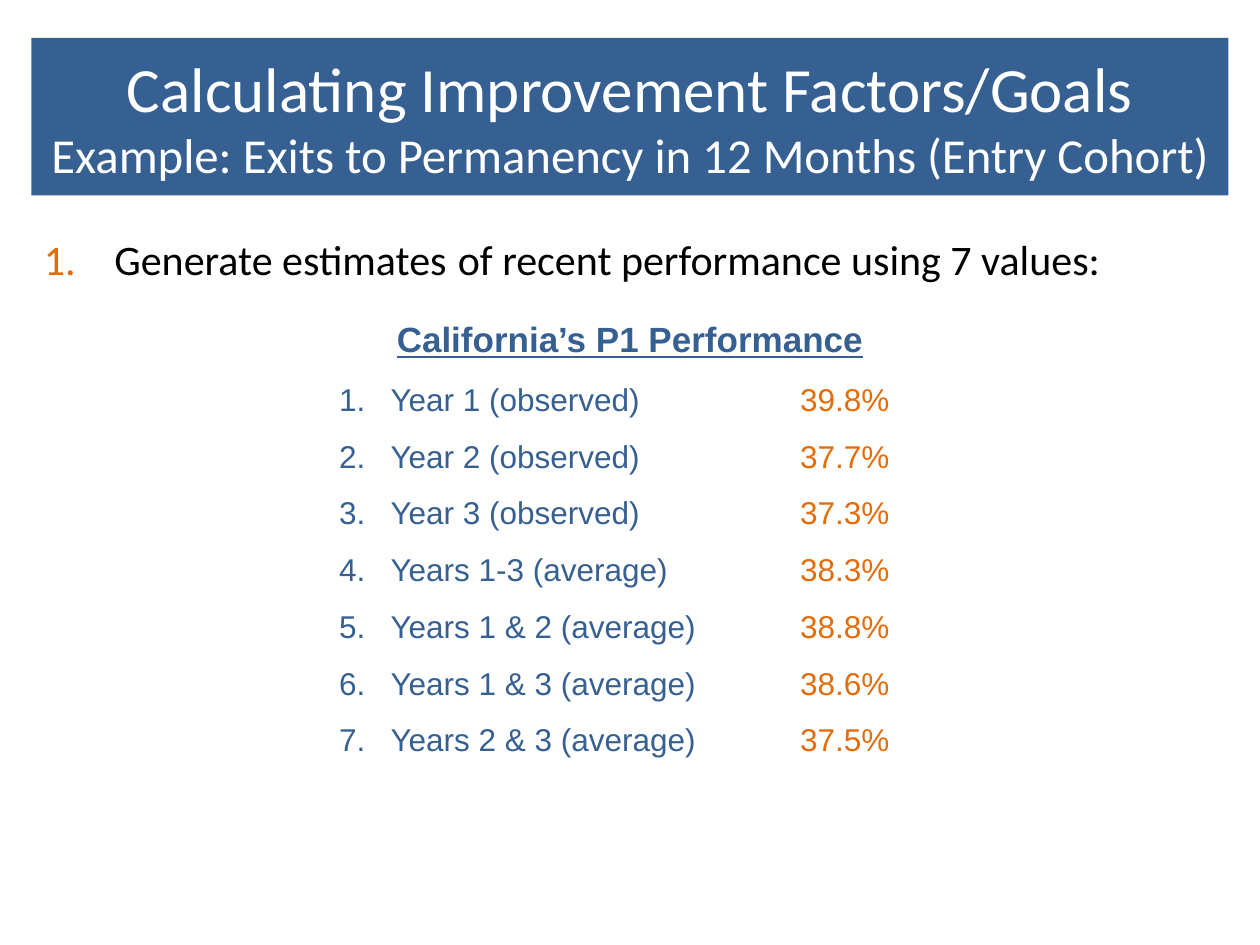
from pptx import Presentation
from pptx.dml.color import RGBColor
from pptx.enum.shapes import MSO_SHAPE
from pptx.enum.text import MSO_ANCHOR, PP_ALIGN
from pptx.oxml.ns import qn
from pptx.util import Emu, Pt
from lxml.etree import SubElement

BLUE, ORANGE, WHITE, BLACK = "376092", "E46C0A", "FFFFFF", "000000"


def px(length):
    return Emu(length * 9144)


def rgb(code):
    return RGBColor.from_string(code)


class Deck:
    heading_font = "Calibri"
    table_font = "Arial"

    def __init__(self, width, height):
        self.presentation = Presentation()
        self.presentation.slide_width = px(width)
        self.presentation.slide_height = px(height)
        self.slide = self.presentation.slides.add_slide(self.presentation.slide_layouts[6])

    def run(self, paragraph, text, size, color, font, strong=False):
        run = paragraph.add_run()
        run.text = text
        run.font.name = font
        run.font.size = Pt(size)
        run.font.color.rgb = rgb(color)
        run.font.bold = run.font.underline = strong

    def banner(self, box, lines):
        banner = self.slide.shapes.add_shape(MSO_SHAPE.RECTANGLE, *map(px, box))
        banner.shadow.inherit = False
        banner.fill.solid()
        banner.fill.fore_color.rgb = rgb(BLUE)
        banner.line.fill.background()
        frame = banner.text_frame
        frame.word_wrap = True
        frame.vertical_anchor = MSO_ANCHOR.MIDDLE
        paragraph = frame.paragraphs[0]
        paragraph.alignment = PP_ALIGN.CENTER
        for number, (text, size) in enumerate(lines):
            if number:
                paragraph.add_line_break()
            self.run(paragraph, text, size, WHITE, self.heading_font)

    def numbered_step(self, box, parts, indent):
        frame = self.slide.shapes.add_textbox(*map(px, box)).text_frame
        frame.word_wrap = True
        paragraph = frame.paragraphs[0]
        properties = paragraph._p.get_or_add_pPr()
        properties.set("marL", str(px(indent)))
        properties.set("indent", str(px(-indent)))
        bullet_color = SubElement(properties, qn("a:buClr"))
        SubElement(bullet_color, qn("a:srgbClr"), val=ORANGE)
        SubElement(properties, qn("a:buFont"), typeface=self.heading_font)
        SubElement(properties, qn("a:buAutoNum"), type="arabicPeriod")
        for text, size in parts:
            self.run(paragraph, text, size, BLACK, self.heading_font)

    def cell(self, cell, text, size, color, alignment, strong=False):
        paragraph = cell.text_frame.paragraphs[0]
        paragraph.alignment = alignment
        self.run(paragraph, text, size, color, self.table_font, strong)

    def performance_table(self, box, widths, heights, heading, values):
        table = self.slide.shapes.add_table(len(heights), len(widths), *map(px, box)).table
        table.first_row = table.horz_banding = False
        for column, width in zip(table.columns, widths):
            column.width = px(width)
        for row, height in zip(table.rows, heights):
            row.height = px(height)
        for cell in table.iter_cells():
            cell.fill.background()
        table.cell(0, 0).merge(table.cell(0, len(widths) - 1))
        self.cell(table.cell(0, 0), heading, 20, BLUE, PP_ALIGN.CENTER, True)
        for number, (period, rate) in enumerate(values, 1):
            self.cell(table.cell(number, 0), f"{number}.", 18, BLUE, PP_ALIGN.RIGHT)
            self.cell(table.cell(number, 1), period, 18, BLUE, PP_ALIGN.LEFT)
            self.cell(table.cell(number, 2), rate, 18, ORANGE, PP_ALIGN.LEFT)


def main():
    deck = Deck(1000, 750)
    deck.banner((25, 30, 950, 125), [
        ("Calculating Improvement Factors/Goals", 36),
        ("Example: Exits to Permanency in 12 Months (Entry Cohort)", 27.9),
    ])
    deck.numbered_step((25, 175, 950, 483), [
        ("Generate estimates", 24),
        (" ", 28),
        ("of recent performance using 7 values:", 24),
    ], 56)
    performance = [
        ("Year 1 (observed)", "39.8%"),
        ("Year 2 (observed)", "37.7%"),
        ("Year 3 (observed)", "37.3%"),
        ("Years 1-3 (average)", "38.3%"),
        ("Years 1 & 2 (average)", "38.8%"),
        ("Years 1 & 3 (average)", "38.6%"),
        ("Years 2 & 3 (average)", "37.5%"),
    ]
    row_heights = [49] + [45] * len(performance)
    deck.performance_table(
        (225, 250, 550, sum(row_heights)), (75, 325, 150), row_heights,
        "California’s P1 Performance", performance,
    )
    deck.presentation.save("out.pptx")


if __name__ == "__main__":
    main()
